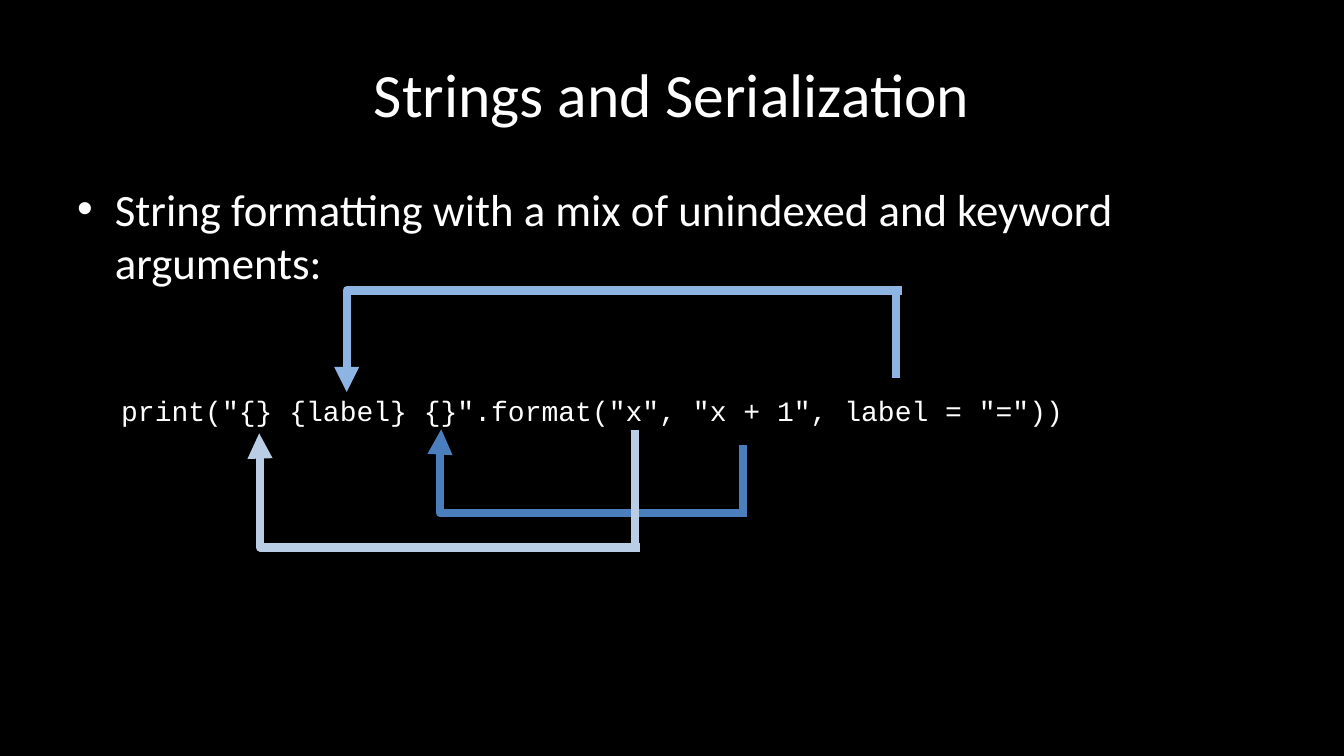
from dataclasses import dataclass

from lxml.etree import SubElement
from pptx import Presentation
from pptx.dml.color import RGBColor as Color
from pptx.enum.shapes import MSO_CONNECTOR as Connector
from pptx.enum.text import MSO_ANCHOR as Anchor, PP_ALIGN as Align
from pptx.oxml.ns import qn
from pptx.util import Pt


@dataclass(frozen=True)
class Theme:
    background: Color = Color.from_string("000000")
    text: Color = Color.from_string("FFFFFF")
    pale: Color = Color.from_string("B9CDE5")
    deep: Color = Color.from_string("4B7EBC")
    sky: Color = Color.from_string("8EB4E3")
    heading_font: str = "Calibri"
    code_font: str = "Courier New"
    title_size: float = 44
    body_size: float = 32
    code_size: float = 20
    line_width: float = 6


@dataclass(frozen=True)
class ArgumentLink:
    color: Color
    start_x: float
    bar_y: float
    field_x: float
    field_y: float
    stem_x: float
    stem_y: float
    bend: int


THEME = Theme()
LINKS = [
    ArgumentLink(THEME.pale, 457.2, 391, 185.2, 309.6, 453.6, 307.5, 99800),
    ArgumentLink(THEME.deep, 533.5, 366.5, 315.2, 306.7, 530.6, 318.2, 100400),
    ArgumentLink(THEME.sky, 644.4, 207.4, 247.7, 280, 640.1, 270, 100000),
]


def apply_format(target, values: dict) -> None:
    for name, value in values.items():
        setattr(target, name, value)


def write_text(para, text: str, font: str, size: float) -> None:
    span = para.add_run()
    span.text = text
    apply_format(span.font, {"name": font, "size": Pt(size)})
    span.font.color.rgb = THEME.text


def set_indent(para, left: float, first: float, bullet: str = "") -> None:
    properties = para._p.get_or_add_pPr()
    properties.set("marL", str(Pt(left)))
    properties.set("indent", str(Pt(first)))
    if bullet:
        SubElement(properties, qn("a:buFont")).set("typeface", "Arial")
        SubElement(properties, qn("a:buChar")).set("char", bullet)


def draw_line(page, kind, color: Color, start_x: float, start_y: float, end_x: float, end_y: float):
    line = page.shapes.add_connector(kind, Pt(start_x), Pt(start_y), Pt(end_x), Pt(end_y))
    line.line.color.rgb = color
    line.line.width = Pt(THEME.line_width)
    SubElement(line._element.spPr, qn("a:effectLst"))
    return line


def draw_arrow(page, link: ArgumentLink) -> None:
    arrow = draw_line(page, Connector.ELBOW, link.color,
                      link.start_x, link.bar_y, link.field_x, link.field_y)
    outline = arrow.line._get_or_add_ln()
    SubElement(outline, qn("a:round"))
    SubElement(outline, qn("a:tailEnd")).set("type", "triangle")
    guides = arrow._element.spPr.find(qn("a:prstGeom")).find(qn("a:avLst"))
    guide = SubElement(guides, qn("a:gd"))
    guide.set("name", "adj1")
    guide.set("fmla", f"val {link.bend}")


def draw_stem(page, link: ArgumentLink) -> None:
    draw_line(page, Connector.STRAIGHT, link.color,
              link.stem_x, link.bar_y, link.stem_x, link.stem_y)


def add_title(page) -> None:
    title = page.shapes.title
    apply_format(title, {"left": Pt(48), "top": Pt(21.6), "width": Pt(864), "height": Pt(90)})
    title.text_frame.vertical_anchor = Anchor.MIDDLE
    para = title.text_frame.paragraphs[0]
    para.alignment = Align.CENTER
    write_text(para, "Strings and Serialization", THEME.heading_font, THEME.title_size)


def add_body(page) -> None:
    box = page.shapes.add_textbox(Pt(48), Pt(126), Pt(864), Pt(356.4))
    frame = box.text_frame
    frame.word_wrap = True
    para = frame.paragraphs[0]
    set_indent(para, 27, -27, "•")
    write_text(para, "String formatting with a mix of unindexed and keyword arguments:",
               THEME.heading_font, THEME.body_size)
    code = frame.add_paragraph()
    set_indent(code, 31.5, 0)
    code.space_before = Pt(75)
    write_text(code, 'print("{} {label} {}".format("x", "x + 1", label = "="))',
               THEME.code_font, THEME.code_size)


def main() -> None:
    deck = Presentation()
    apply_format(deck, {"slide_width": Pt(960), "slide_height": Pt(540)})
    page = deck.slides.add_slide(deck.slide_layouts.get_by_name("Title Only"))
    page.background.fill.solid()
    page.background.fill.fore_color.rgb = THEME.background
    add_title(page)
    add_body(page)
    for draw in (draw_arrow, draw_stem):
        for link in LINKS:
            draw(page, link)
    deck.save("out.pptx")


if __name__ == "__main__":
    main()
